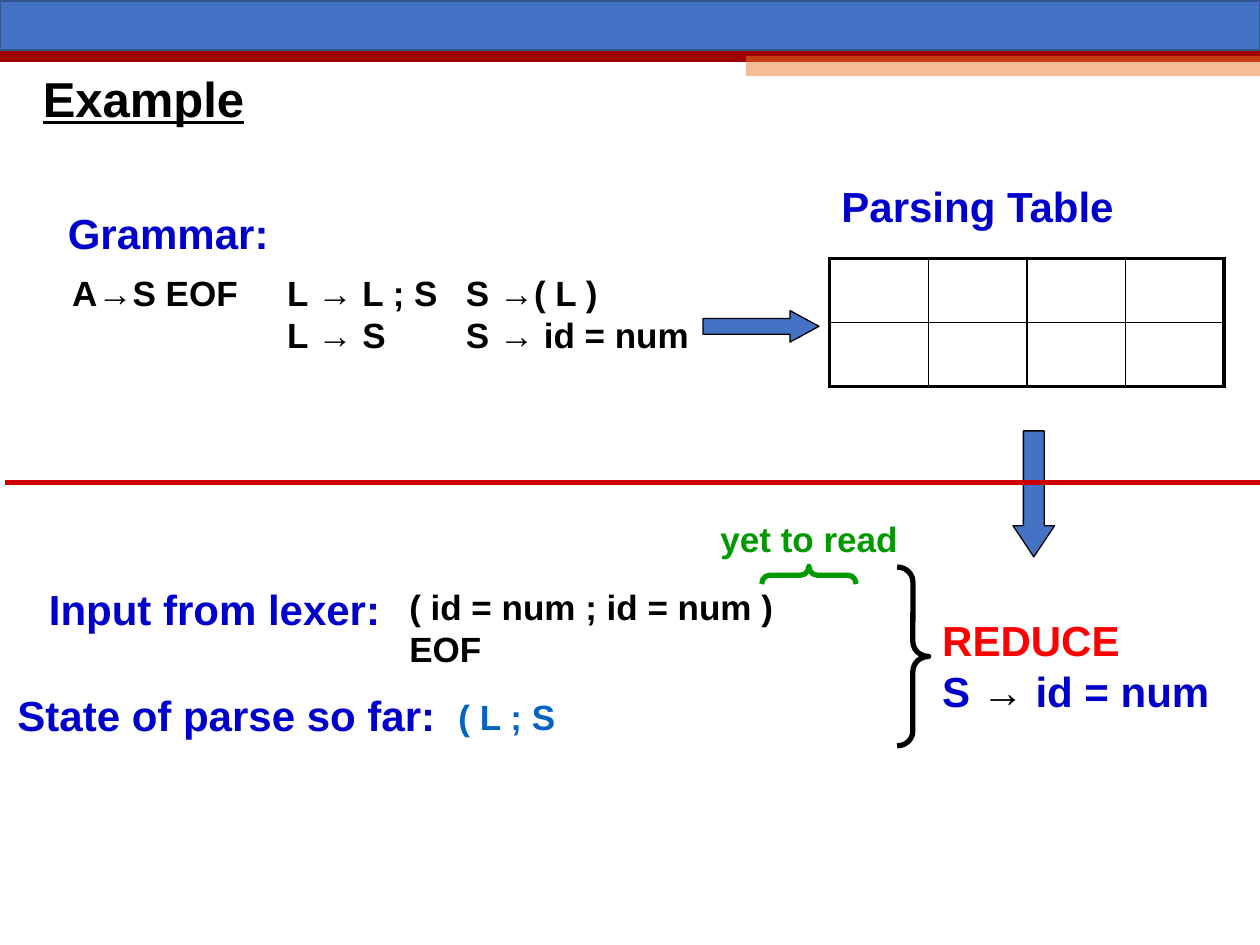
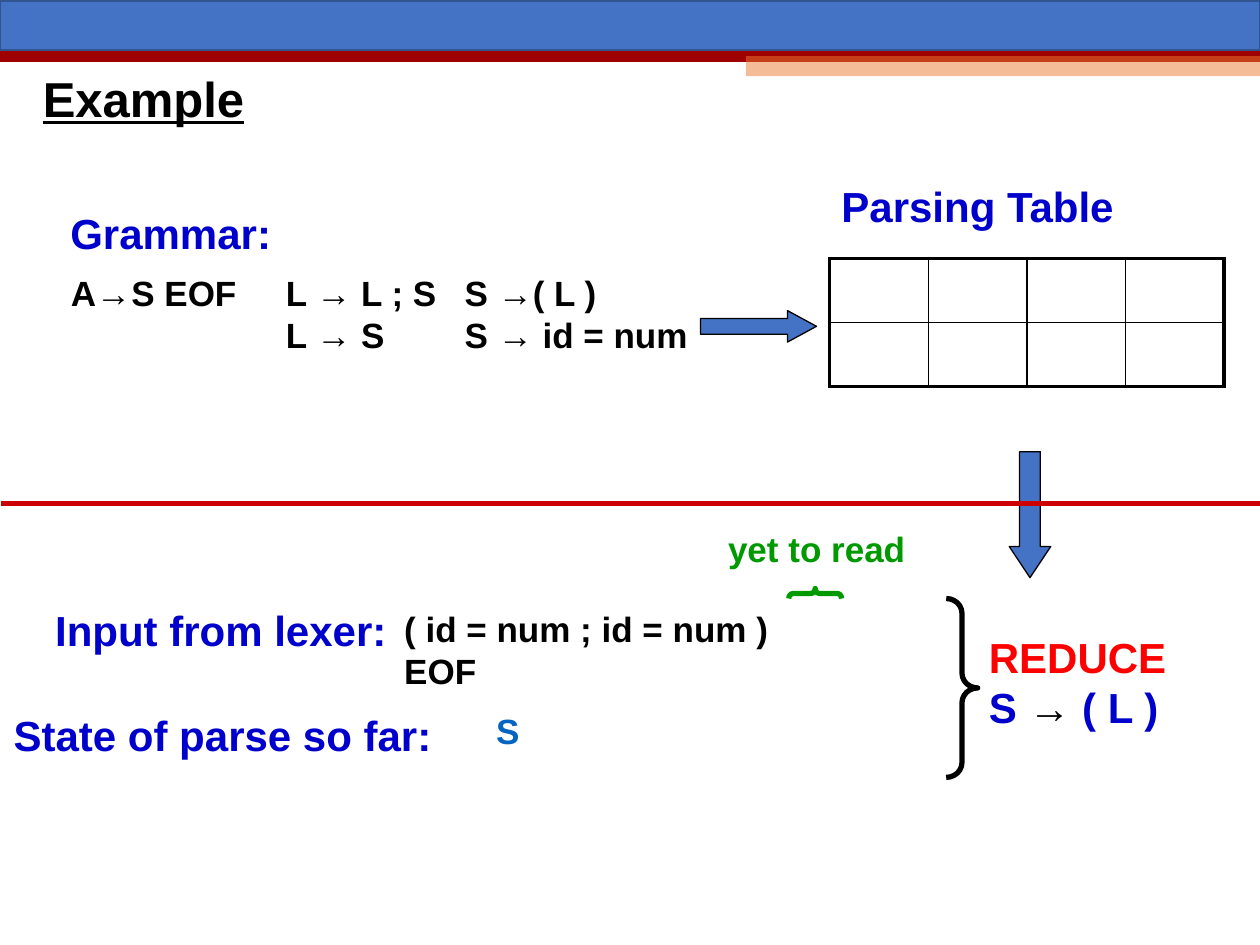
from itertools import product

from lxml import etree
from pptx import Presentation
from pptx import util as u
from pptx.dml.color import RGBColor
from pptx.enum import shapes, text
from pptx.oxml import ns

SLIDE_W, SLIDE_H = u.Inches(10), u.Inches(7.5)
COLUMN, ROW = SLIDE_W / 100, SLIDE_H / 75
TITLE_ONLY = 5
COLORS = {
    "band": "4472C4", "band_edge": "325491", "stripe": "9E0000", "accent": "ED7D31",
    "heading": "0000CC", "body": "000000", "parsed": "0563C1",
    "unread": "009900", "action": "FF0000", "divider": "CC0000",
}
BOX_FORMAT = {"auto_size": text.MSO_AUTO_SIZE.SHAPE_TO_FIT_TEXT,
              "vertical_anchor": text.MSO_ANCHOR.TOP}
TITLE_FORMAT = {"auto_size": text.MSO_AUTO_SIZE.NONE,
                "vertical_anchor": text.MSO_ANCHOR.MIDDLE, "word_wrap": True}
FONT_FORMAT = {"name": "Arial", "bold": True}
PRESET = shapes.MSO_SHAPE

STEPS = [
    {
        "grammar_label": 4.4, "rules": (4.75, 21.8, 36), "to_table": 55.8,
        "shift": (0, 0), "input_label": (2.9, 45.8), "tokens": (31.5, 46),
        "state": ("( L ; S", (35.4, 54.7, 10.5, 4.3)),
        "unread_label": (56.2, 40.6), "unread_brace": (60.45, 44.95, 7.5, 1.4, 0.46),
        "brace": (71.2, 45), "action": (73.8, 48.3, 23.4, 13.1), "rule": " id = num",
    },
    {
        "grammar_label": 4.6, "rules": (4.65, 21.7, 35.9), "to_table": 55.6,
        "shift": (-0.3, 1.65), "input_label": (3.4, 47.5), "tokens": (31.1, 47.7),
        "state": ("S", (38.4, 55.8, 4.6, 4.3)),
        "unread_label": (56.8, 41.4), "unread_brace": (62.6, 46.7, 4.2, 0.8, 0.42),
        "brace": (75.1, 47.5), "action": (77.5, 49.6, 16.3, 13.1), "rule": " ( L )",
    },
]


def place(column, row, columns, rows):
    return [round(v) for v in (column * COLUMN, row * ROW, columns * COLUMN, rows * ROW)]


def rgb(name):
    return RGBColor.from_string(COLORS[name])


def apply(target, values):
    for attribute, value in values.items():
        setattr(target, attribute, value)


def write(paragraph, runs, size, **extra):
    for words, color in runs:
        run = paragraph.add_run()
        run.text = words
        apply(run.font, {**FONT_FORMAT, "size": u.Pt(size), **extra})
        run.font.color.rgb = rgb(color)


def add_words(slide, box, lines, size=20, color="body", wrap=False):
    frame = slide.shapes.add_textbox(*place(*box)).text_frame
    apply(frame, {**BOX_FORMAT, "word_wrap": wrap})
    for index, line in enumerate(lines):
        paragraph = frame.add_paragraph() if index else frame.paragraphs[0]
        write(paragraph, [(line, color)] if isinstance(line, str) else line, size)


def add_figure(slide, preset, box, fill=None, line=None, width=0.75, adjust=(), turn=0):
    figure = slide.shapes.add_shape(preset, *place(*box))
    figure.shadow.inherit = False
    figure.rotation = turn
    for index, value in enumerate(adjust):
        figure.adjustments[index] = value
    if fill:
        figure.fill.solid()
        figure.fill.fore_color.rgb = rgb(fill)
    else:
        figure.fill.background()
    if line:
        figure.line.color.rgb = rgb(line)
        figure.line.width = u.Pt(width)
    else:
        figure.line.fill.background()
    return figure


def add_rule(slide, start, row, color, width):
    left, top, right, _ = place(start, row, 100, 0)
    rule = slide.shapes.add_connector(shapes.MSO_CONNECTOR.STRAIGHT, left, top, right, top)
    rule.line.color.rgb = rgb(color)
    rule.line.width = u.Pt(width)
    etree.SubElement(rule.element.spPr, ns.qn("a:effectLst"))
    return rule


def add_unread_brace(slide, left, top, span, depth, curve):
    upright = (left + (span - depth) / 2, top - (span - depth) / 2, depth, span)
    add_figure(slide, PRESET.RIGHT_BRACE, upright, line="unread", width=3,
               adjust=(curve, 0.5), turn=270)


def add_border(properties, side, width):
    edge = etree.SubElement(properties, ns.qn(f"a:ln{side}"), w=str(u.Pt(width)))
    fill = etree.SubElement(edge, ns.qn("a:solidFill"))
    etree.SubElement(fill, ns.qn("a:srgbClr"), val=COLORS["body"])


def add_parsing_table(slide, box, rows=2, columns=4):
    holder = slide.shapes.add_table(rows, columns, *place(*box))
    grid = holder.table
    apply(grid, {"first_row": False, "horz_banding": False})
    cells = holder.element.iter(ns.qn("a:tc"))
    for (row, column), cell in zip(product(range(rows), range(columns)), cells):
        outer = {"L": column == 0, "R": column == columns - 1,
                 "T": row == 0, "B": row == rows - 1}
        properties = cell.get_or_add_tcPr()
        for side, is_outer in outer.items():
            add_border(properties, side, 2.25 if is_outer else 1)
        grid.cell(row, column).fill.background()


def add_bands(slide, layout):
    stripe = add_rule(slide, 0, 4.4, "stripe", 7.5)
    accent = add_figure(slide, PRESET.RECTANGLE, (59.2, 4.45, 40.8, 1.6), fill="accent")
    tint = next(accent.element.iter(ns.qn("a:srgbClr")))
    etree.SubElement(tint, ns.qn("a:alpha"), val="50000")
    band = add_figure(slide, PRESET.RECTANGLE, (0, 0.1, 100, 3.9),
                      fill="band", line="band_edge", width=1)
    for number, part in enumerate((stripe, accent, band), start=101):
        next(part.element.iter(ns.qn("p:cNvPr"))).set("id", str(number))
        layout.shapes.element.append(part.element)


def set_title(slide, words):
    title = slide.shapes.title
    apply(title, dict(zip(("left", "top", "width", "height"), place(2.4, 4.5, 90, 7.1))))
    apply(title.text_frame, TITLE_FORMAT)
    paragraph = title.text_frame.paragraphs[0]
    apply(paragraph, {"alignment": text.PP_ALIGN.LEFT, "line_spacing": 0.9})
    write(paragraph, [(words, "body")], 28, underline=True)


def add_grammar(slide, step):
    start, lists, statements = step["rules"]
    add_words(slide, (start, 21.05, 15.3, 4.4), ["A→S EOF"])
    add_words(slide, (lists, 21.05, 14, 7.7), ["L → L ; S", "L → S"])
    add_words(slide, (step["grammar_label"], 16, 18, 5), ["Grammar:"], 24, "heading")
    add_words(slide, (statements, 21.05, 20.3, 7.7), ["S →( L )", "S → id = num"])
    add_parsing_table(slide, (65.85, 20.5, 31.3, 10.2))
    add_words(slide, (65.8, 13.85, 23.9, 5), ["Parsing Table"], 24, "heading")
    add_figure(slide, PRESET.RIGHT_ARROW, (step["to_table"], 24.65, 9.2, 2.5),
               "band", "body", adjust=(0.5, 0.92))


def add_parse(slide, step):
    across, down = step["shift"]
    parsed, parsed_box = step["state"]
    add_words(slide, (0.4 + across, 54.2 + down, 35.2, 5),
              ["State of parse so far:"], 24, "heading")
    add_words(slide, (*step["tokens"], 37.3, 4.3), ["( id = num ; id = num ) EOF"], wrap=True)
    add_words(slide, (*step["input_label"], 28.3, 5), ["Input from lexer:"], 24, "heading")
    add_words(slide, parsed_box, [parsed], color="parsed")
    add_unread_brace(slide, *step["unread_brace"])
    add_words(slide, (*step["unread_label"], 17, 4.3), ["yet to read"], color="unread")
    add_figure(slide, PRESET.RIGHT_BRACE, (*step["brace"], 2.5, 14.2),
               line="body", width=3, adjust=(0.47, 0.5))
    add_figure(slide, PRESET.DOWN_ARROW, (80.4 + across, 34.2 + down, 3.3, 10),
               "band", "body", adjust=(0.5, 0.75))
    add_rule(slide, 0.4 + across, 38.3 + down, "divider", 3)
    reduction = [("S ", "heading"), ("→", "body"), (step["rule"], "heading")]
    add_words(slide, step["action"], [[("REDUCE", "action")], reduction], 24)


def main():
    deck = Presentation()
    apply(deck, {"slide_width": SLIDE_W, "slide_height": SLIDE_H})
    layout = deck.slide_layouts[TITLE_ONLY]
    for index, step in enumerate(STEPS):
        slide = deck.slides.add_slide(layout)
        if index == 0:
            add_bands(slide, layout)
        set_title(slide, "Example")
        add_grammar(slide, step)
        add_parse(slide, step)
    deck.save("out.pptx")


if __name__ == "__main__":
    main()
